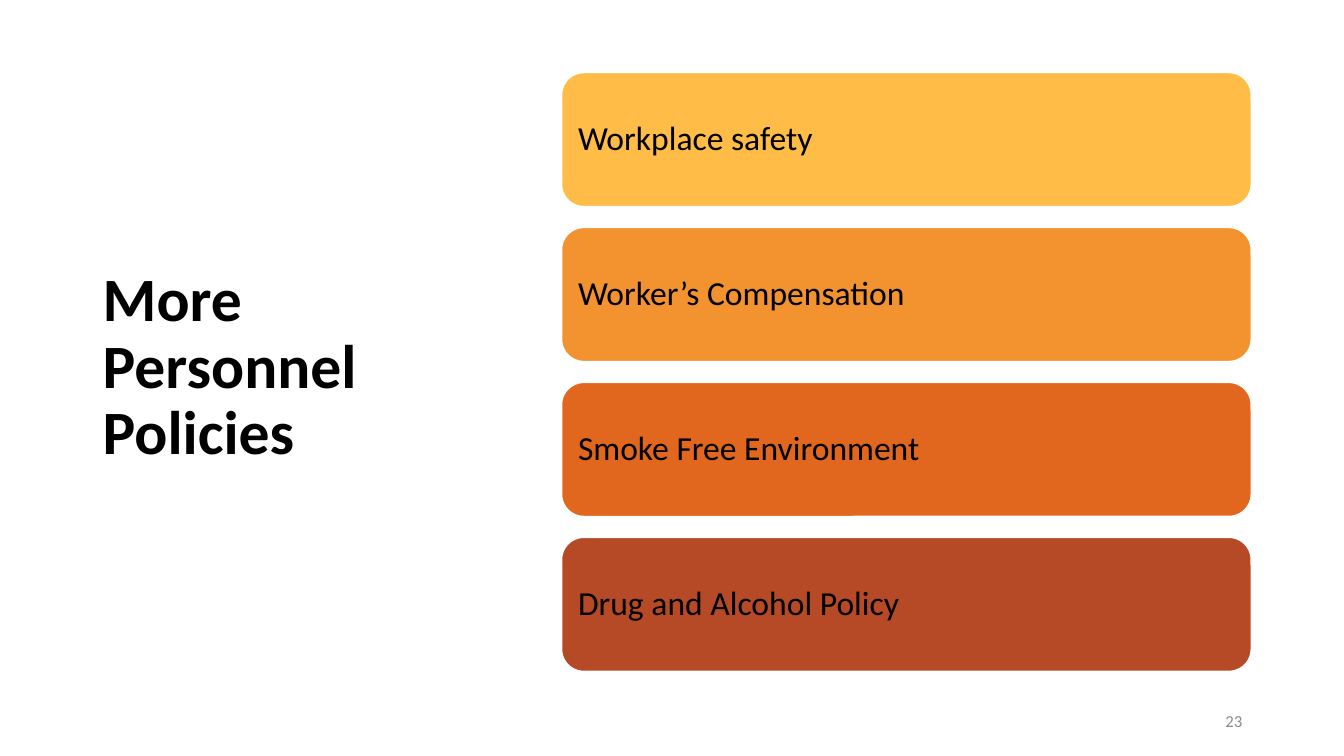
import pptx
import pptx.util
import pptx.dml.color
import pptx.enum.shapes
import pptx.enum.text

TITLE = "More Personnel Policies"
PAGE_NUMBER = "23"
POLICIES = [
    ("Workplace safety", "FFBD47"),
    ("Worker’s Compensation", "F29330"),
    ("Smoke Free Environment", "E2671E"),
    ("Drug and Alcohol Policy", "B64926"),
]

SLIDE_WIDTH, SLIDE_HEIGHT = 13.33, 7.5
MARGIN = 0.92
TITLE_BOX = (MARGIN, 0.61, 3.69, 6.09)
NUMBER_BOX = (9.42, 6.95, 3, 0.4)
BAR_LEFT, BAR_TOP = 5.57, 0.72
BAR_WIDTH = SLIDE_WIDTH - MARGIN - BAR_LEFT
BAR_HEIGHT, BAR_PITCH = 1.33, 1.537


def color(hex_code):
    return pptx.dml.color.RGBColor.from_string(hex_code)


def inches(box):
    return [pptx.util.Inches(length) for length in box]


def write(shape, text, size, ink="000000", bold=False, align="LEFT", spacing=0.9):
    frame = shape.text_frame
    frame.word_wrap = True
    frame.vertical_anchor = pptx.enum.text.MSO_ANCHOR.MIDDLE
    paragraph = frame.paragraphs[0]
    paragraph.alignment = pptx.enum.text.PP_ALIGN[align]
    paragraph.line_spacing = spacing
    run = paragraph.add_run()
    run.text = text
    run.font.name = "Calibri"
    run.font.size = pptx.util.Pt(size)
    run.font.bold = bold
    run.font.color.rgb = color(ink)


def add_policy_bar(slide, row, policy, fill):
    box = (BAR_LEFT, BAR_TOP + row * BAR_PITCH, BAR_WIDTH, BAR_HEIGHT)
    bar = slide.shapes.add_shape(
        pptx.enum.shapes.MSO_SHAPE.ROUNDED_RECTANGLE, *inches(box))
    bar.shadow.inherit = False
    bar.fill.solid()
    bar.fill.fore_color.rgb = color(fill)
    bar.line.color.rgb = color("FFFFFF")
    bar.line.width = pptx.util.Pt(1)
    write(bar, policy, 24)


def main():
    deck = pptx.Presentation()
    deck.slide_width, deck.slide_height = inches((SLIDE_WIDTH, SLIDE_HEIGHT))
    slide = deck.slides.add_slide(deck.slide_layouts[6])

    write(slide.shapes.add_textbox(*inches(TITLE_BOX)), TITLE, 44, bold=True)
    write(slide.shapes.add_textbox(*inches(NUMBER_BOX)), PAGE_NUMBER, 12,
          ink="8C8C8C", align="RIGHT", spacing=1.0)
    for row, (policy, fill) in enumerate(POLICIES):
        add_policy_bar(slide, row, policy, fill)

    deck.save("out.pptx")


if __name__ == "__main__":
    main()
